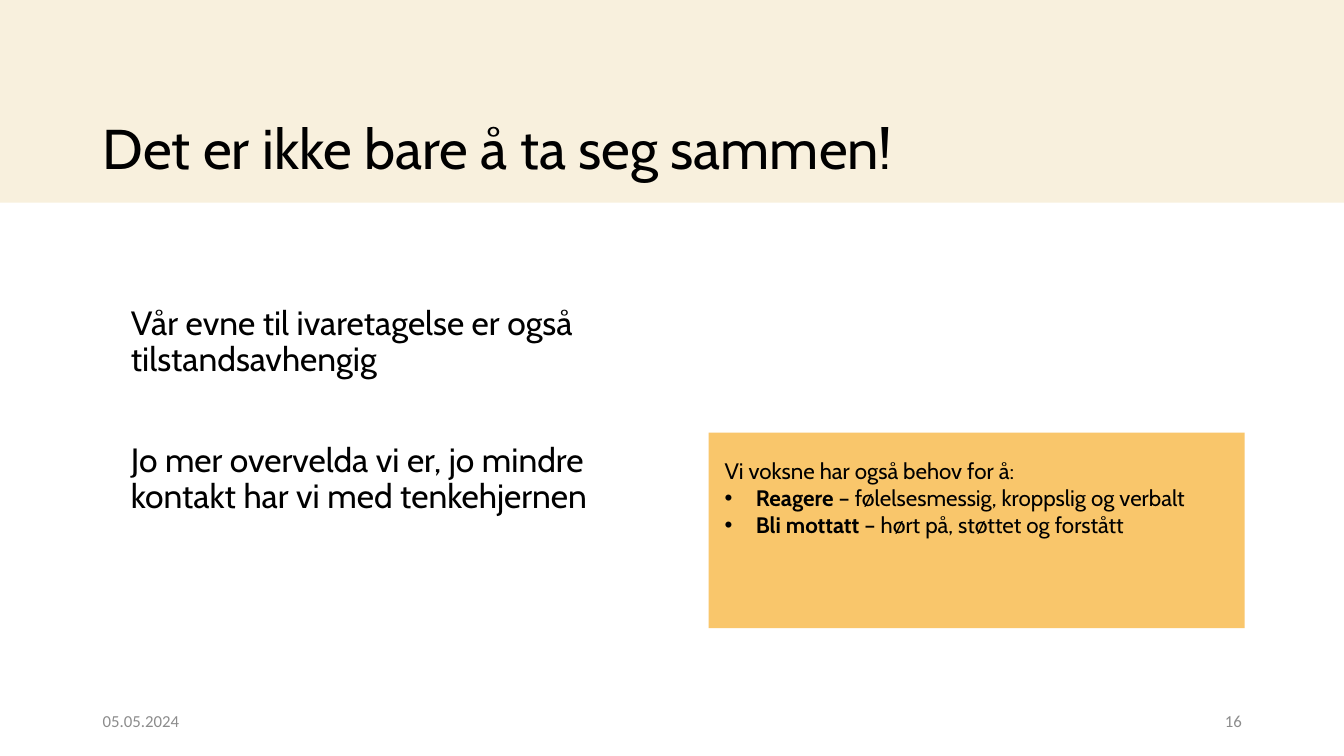
"""Build the slide about how adults' capacity for care depends on their state."""
from pptx import Presentation, util as u
from pptx.dml.color import RGBColor
from pptx.enum import shapes, text
from pptx.oxml import parse_xml
from pptx.oxml.ns import nsdecls

COLORS = {"cream": "F8F0DD", "amber": "F9C66B", "black": "000000", "gray": "8C8C8C"}


def add_block(name, left, top, width, height):
    block = slide.shapes.add_shape(
        shapes.MSO_SHAPE.RECTANGLE, u.Cm(left), u.Cm(top), u.Cm(width), u.Cm(height))
    block.shadow.inherit = False
    block.fill.solid()
    block.fill.fore_color.rgb = RGBColor.from_string(COLORS[name])
    block.line.fill.background()


def add_text(lines, left, top, width, height, size, font="Cabin", color="black",
             anchor=text.MSO_ANCHOR.TOP):
    box = slide.shapes.add_textbox(u.Cm(left), u.Cm(top), u.Cm(width), u.Cm(height))
    frame = box.text_frame
    frame.word_wrap = True
    frame.vertical_anchor = anchor
    for i, parts in enumerate(lines):
        para = frame.add_paragraph() if i else frame.paragraphs[0]
        for part in parts:
            run = para.add_run()
            run.text = part
            run.font.size = u.Pt(size)
            run.font.name = font
            run.font.color.rgb = RGBColor.from_string(COLORS[color])
    return frame


deck = Presentation()
deck.slide_width, deck.slide_height = u.Cm(33.87), u.Cm(19.05)
slide = deck.slides.add_slide(deck.slide_layouts[6])

add_block("amber", 17.86, 10.9, 13.51, 4.93)
add_block("cream", 0, 0, 33.87, 5.11)

title = add_text([["Det er ikke bare å ta seg sammen!"]], 2.34, 2.57, 26.31, 2.49, 40,
                 anchor=text.MSO_ANCHOR.MIDDLE)
body = add_text([["Vår evne til ivaretagelse er også tilstandsavhengig"],
                 ["Jo mer overvelda vi er, jo mindre kontakt har vi med tenkehjernen"]],
                3.05, 7.59, 12.95, 11.28, 24)
for para in title.paragraphs + body.paragraphs:
    para.line_spacing = 0.9
body.paragraphs[1].space_before = u.Pt(46)

for label, left, align in (("05.05.2024", 2.34, text.PP_ALIGN.LEFT),
                           ("16", 23.93, text.PP_ALIGN.RIGHT)):
    foot = add_text([[label]], left, 17.65, 7.62, 1.02, 12, "Calibri", "gray",
                    text.MSO_ANCHOR.MIDDLE)
    foot.paragraphs[0].alignment = align

needs = add_text([["Vi voksne har også behov for å:"],
                  ["Reagere", " – følelsesmessig, kroppslig og verbalt"],
                  ["Bli mottatt ", "– hørt på, støttet og forstått"]],
                 18.01, 11.4, 13.51, 3, 16)
for para in needs.paragraphs[1:]:
    para.runs[0].font.bold = True
    props = para._p.get_or_add_pPr()
    props.set("marL", str(u.Cm(0.79)))
    props.set("indent", str(-u.Cm(0.79)))
    props.append(parse_xml(f'<a:buFont {nsdecls("a")} typeface="Arial"/>'))
    props.append(parse_xml(f'<a:buChar {nsdecls("a")} char="•"/>'))

deck.save("out.pptx")
